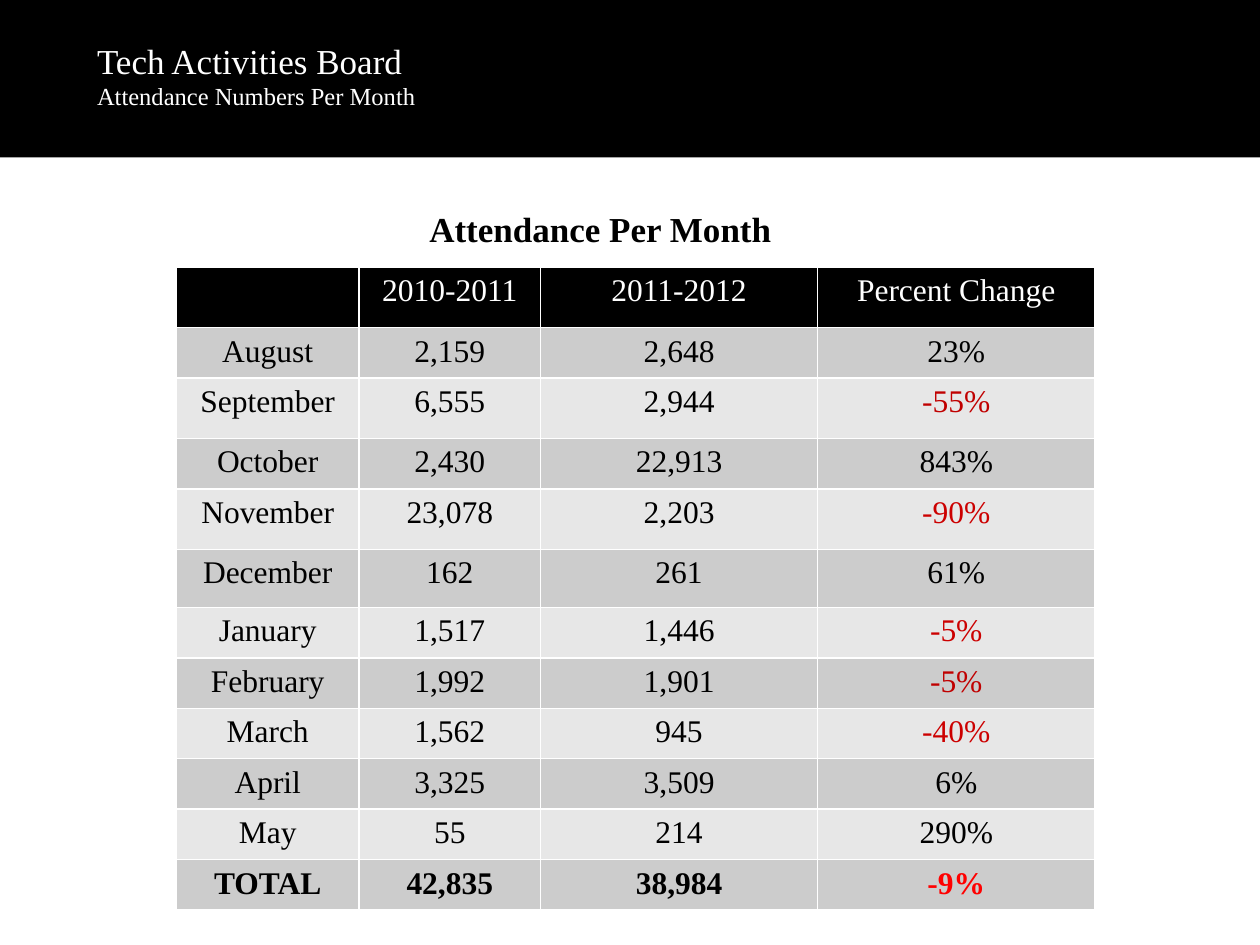
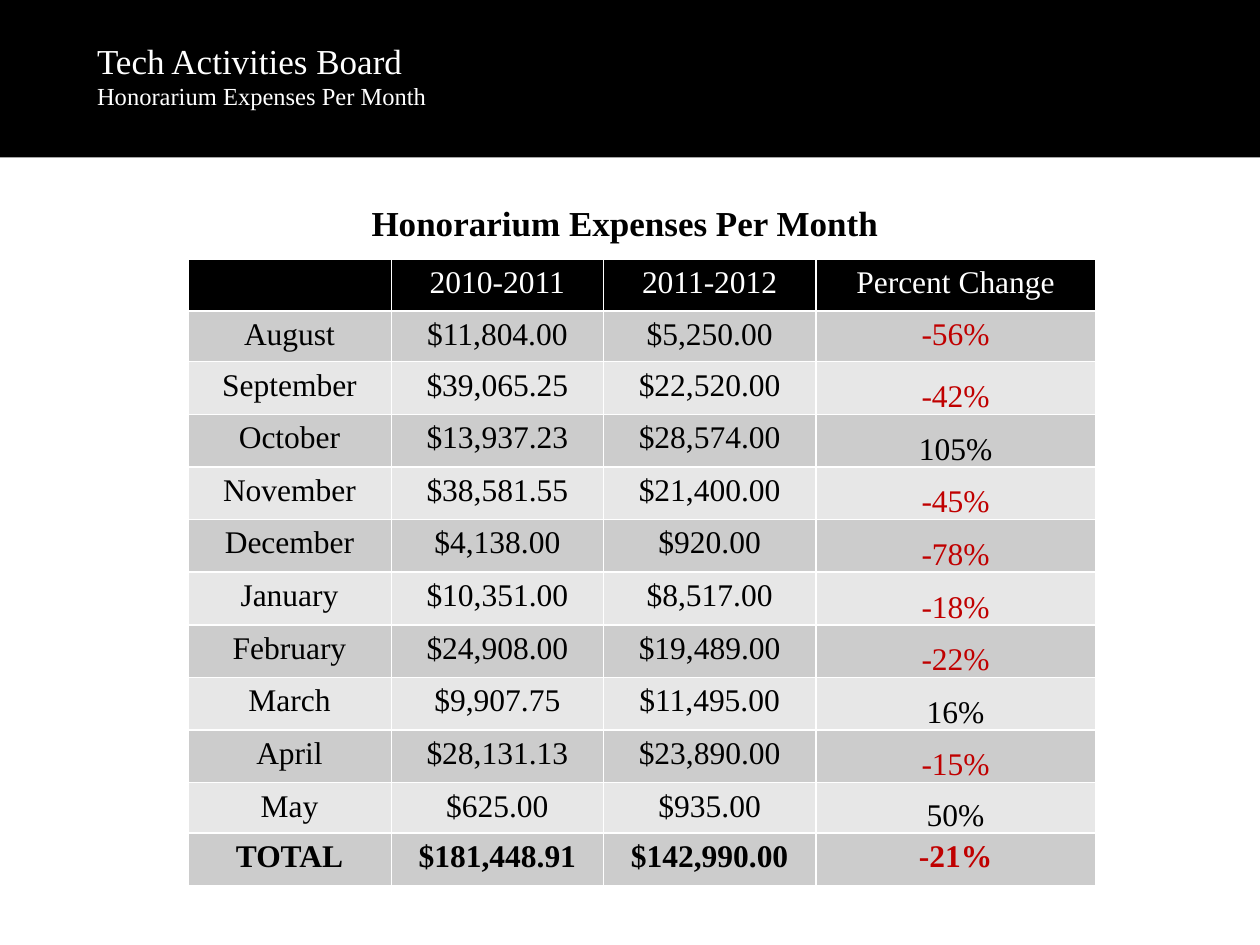
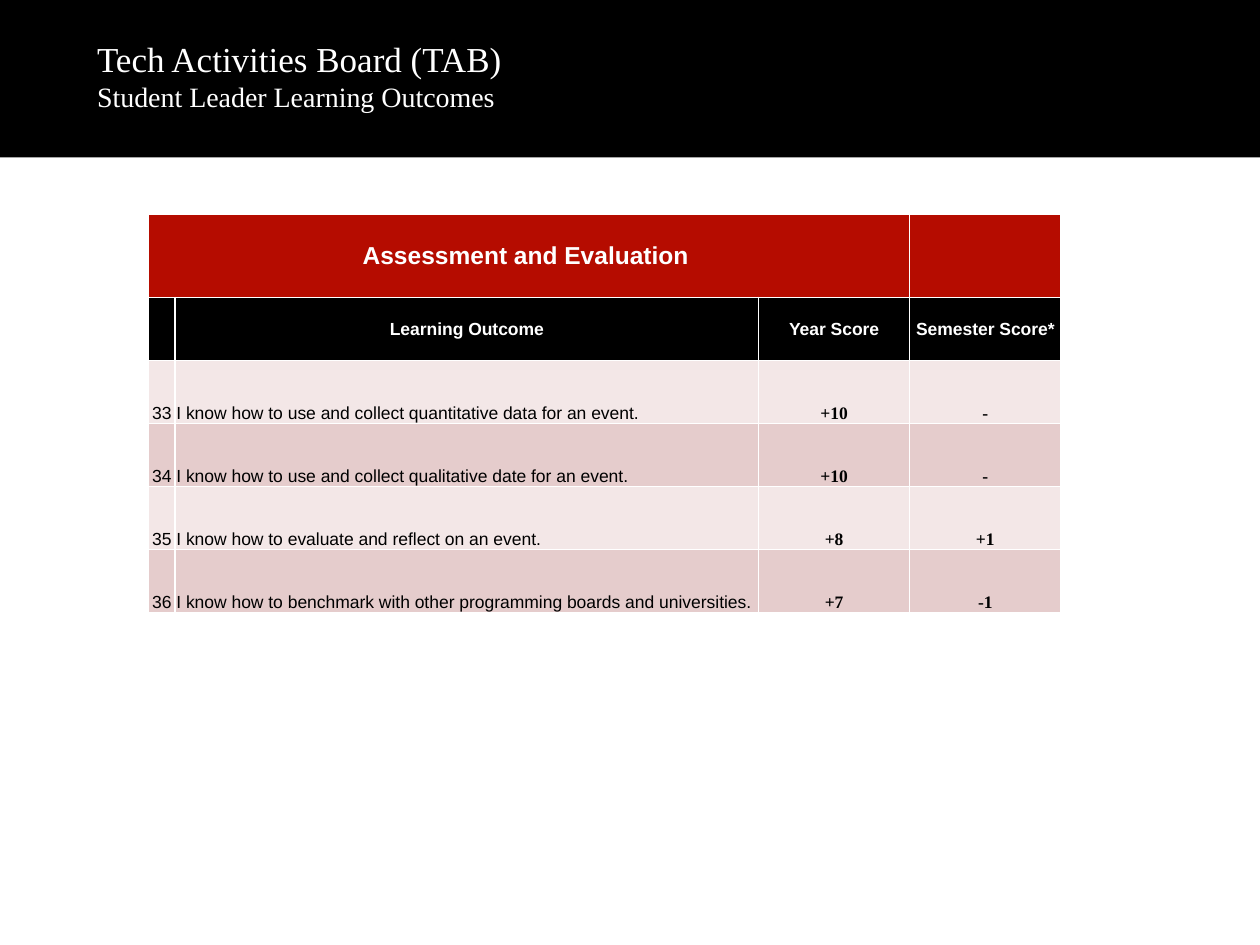
from lxml import etree
from pptx import Presentation
from pptx.dml.color import RGBColor
from pptx.enum.shapes import MSO_SHAPE
from pptx.enum.text import MSO_ANCHOR, MSO_AUTO_SIZE, PP_ALIGN
from pptx.oxml.ns import qn
from pptx.util import Inches, Pt

RECT = MSO_SHAPE.RECTANGLE
TOP, MIDDLE, BOTTOM = MSO_ANCHOR.TOP, MSO_ANCHOR.MIDDLE, MSO_ANCHOR.BOTTOM
LEFT, CENTER = PP_ALIGN.LEFT, PP_ALIGN.CENTER
NO_FIT = MSO_AUTO_SIZE.NONE

SLIDE_W, SLIDE_H = Inches(10), Inches(7.5)
UNIT = SLIDE_W / 100
SERIF, SANS = "Times New Roman", "Arial"
ROOMY = (1, 0.5, 1, 0.5)
TIGHT = (0.1, 0.1, 0.1, 0)

COLORS = {
    "black": "000000",
    "white": "FFFFFF",
    "dark_band": "CCCCCC",
    "light_band": "E7E7E7",
    "loss": "C00000",
    "bright_loss": "CC0000",
    "total_loss": "FF0000",
    "heading": "B50C00",
    "pale_rose": "F3E7E7",
    "rose": "E5CCCC",
}

YEARS = ("", "2010-2011", "2011-2012", "Percent Change")
ATTENDANCE = [
    YEARS,
    ("August", "2,159", "2,648", "23%"),
    ("September", "6,555", "2,944", "-55%"),
    ("October", "2,430", "22,913", "843%"),
    ("November", "23,078", "2,203", "-90%"),
    ("December", "162", "261", "61%"),
    ("January", "1,517", "1,446", "-5%"),
    ("February", "1,992", "1,901", "-5%"),
    ("March", "1,562", "945", "-40%"),
    ("April", "3,325", "3,509", "6%"),
    ("May", "55", "214", "290%"),
    ("TOTAL", "42,835", "38,984", "-9%"),
]
ATTENDANCE_LOSSES = {
    "November": "bright_loss",
    "January": "bright_loss",
    "March": "bright_loss",
    "TOTAL": "total_loss",
}
EXPENSES = [
    YEARS,
    ("August", "$11,804.00", "$5,250.00", "-56%"),
    ("September", "$39,065.25", "$22,520.00", "-42%"),
    ("October", "$13,937.23", "$28,574.00", "105%"),
    ("November", "$38,581.55", "$21,400.00", "-45%"),
    ("December", "$4,138.00", "$920.00", "-78%"),
    ("January", "$10,351.00", "$8,517.00", "-18%"),
    ("February", "$24,908.00", "$19,489.00", "-22%"),
    ("March", "$9,907.75", "$11,495.00", "16%"),
    ("April", "$28,131.13", "$23,890.00", "-15%"),
    ("May", "$625.00", "$935.00", "50%"),
    ("TOTAL", "$181,448.91", "$142,990.00", "-21%"),
]
OUTCOMES = [
    ("Assessment and Evaluation ", "", "", ""),
    ("", "Learning Outcome", "Year Score", "Semester Score*"),
    ("33", "I know how to use and collect quantitative data for an event.", "+10", "-"),
    ("34", "I know how to use and collect qualitative date for an event.", "+10", "-"),
    ("35", "I know how to evaluate and reflect on an event.", "+8", "+1"),
    ("36", "I know how to benchmark with other programming boards and universities.",
     "+7", "-1"),
]


def grid(n):
    return int(n * UNIT)


def rgb(name):
    return RGBColor.from_string(COLORS[name])


def format_run(r, size, color="black", font=SERIF, bold=False):
    r.font.size = Pt(size)
    r.font.name = font
    r.font.bold = bold
    r.font.color.rgb = rgb(color)


def add_band(s, layout):
    band = s.shapes.add_shape(RECT, 0, 0, SLIDE_W, grid(12.5))
    band.shadow.inherit = False
    band.fill.solid()
    band.fill.fore_color.rgb = rgb("black")
    band.line.fill.background()
    layout.placeholders[0].element.addprevious(band.element)


def set_title(s, name, topic, topic_size):
    title = s.shapes.title
    title.left, title.top = grid(6.7), grid(-0.3)
    title.width, title.height = grid(82.2), grid(12.5)
    tf = title.text_frame
    tf.word_wrap = True
    tf.auto_size = NO_FIT
    tf.vertical_anchor = MIDDLE
    p = tf.paragraphs[0]
    p.alignment = LEFT
    for text, size in ((name, 20), (topic, topic_size)):
        if p.runs:
            p.add_line_break()
        r = p.add_run()
        r.text = text
        format_run(r, size, "white")
    for br in p._p.findall(qn("a:br")):
        etree.SubElement(br, qn("a:rPr"), sz="2000")


def add_caption(s, text, left, top, width, align=CENTER, wrap=True):
    box = s.shapes.add_textbox(grid(left), grid(top), grid(width), grid(4.4))
    tf = box.text_frame
    tf.text = text
    tf.word_wrap = wrap
    p = tf.paragraphs[0]
    p.alignment = align
    format_run(p.runs[0], 20, bold=True)


def set_borders(cell):
    tcPr = cell._tc.get_or_add_tcPr()
    for side in ("a:lnL", "a:lnR", "a:lnT", "a:lnB"):
        ln = etree.SubElement(tcPr, qn(side), w=str(Pt(1)))
        fill = etree.SubElement(ln, qn("a:solidFill"))
        etree.SubElement(fill, qn("a:srgbClr"), val=COLORS["white"])


def write_cell(cell, text, fill, size, color="black", font=SERIF, bold=False,
               align=CENTER, anchor=TOP, margins=ROOMY):
    set_borders(cell)
    cell.fill.solid()
    cell.fill.fore_color.rgb = rgb(fill)
    cell.vertical_anchor = anchor
    (cell.margin_left, cell.margin_top,
     cell.margin_right, cell.margin_bottom) = map(grid, margins)
    p = cell.text_frame.paragraphs[0]
    p.text = text
    p.alignment = align
    for r in p.runs:
        format_run(r, size, color, font, bold)


def add_grid_table(s, left, top, cols, rows):
    frame = s.shapes.add_table(len(rows), len(cols), grid(left), grid(top),
                               grid(sum(cols)), grid(sum(rows)))
    table = frame.table
    for column, width in zip(table.columns, cols):
        column.width = grid(width)
    for row, height in zip(table.rows, rows):
        row.height = grid(height)
    return table


def fill_months(table, data, losses, low_changes=False):
    last = len(data) - 1
    for i, record in enumerate(data):
        fill = "black" if i == 0 else "dark_band" if i % 2 else "light_band"
        for j, text in enumerate(record):
            color = "white" if i == 0 else "black"
            if text.startswith("-"):
                color = losses.get(record[0], "loss")
            low = low_changes and j == 3 and 1 < i < last
            write_cell(table.cell(i, j), text, fill, 18, color, bold=i == last,
                       anchor=BOTTOM if low else TOP,
                       margins=TIGHT if low else ROOMY)


def fill_outcomes(table, data):
    table.cell(0, 0).merge(table.cell(0, 2))
    for i, record in enumerate(data):
        for j, text in enumerate(record):
            cell = table.cell(i, j)
            if i < 2:
                write_cell(cell, text, ("heading", "black")[i], (14, 10)[i], "white",
                           SANS, True, anchor=MIDDLE, margins=TIGHT)
            else:
                score = j > 1
                write_cell(cell, text, ("pale_rose", "rose")[i % 2], 10,
                           font=SERIF if score else SANS, bold=score,
                           align=LEFT if j == 1 else CENTER,
                           anchor=BOTTOM, margins=TIGHT)


def main():
    prs = Presentation()
    prs.slide_width, prs.slide_height = SLIDE_W, SLIDE_H
    layout = prs.slide_layouts[5]

    s = prs.slides.add_slide(layout)
    add_band(s, layout)
    set_title(s, "Tech Activities Board", "Attendance Numbers Per Month", 14)
    add_caption(s, "Attendance Per Month ", 20.3, 16, 55.4)
    rows = [4.8, 4, 4.8, 4, 4.8, 4.6] + [4] * 6
    table = add_grid_table(s, 14, 21.2, [14.5, 14.4, 22, 22], rows)
    fill_months(table, ATTENDANCE, ATTENDANCE_LOSSES)

    s = prs.slides.add_slide(layout)
    set_title(s, "Tech Activities Board", "Honorarium Expenses Per Month", 14)
    add_caption(s, "Honorarium Expenses Per Month", 28.5, 15.5, 43.2, LEFT, False)
    rows = [4.1, 4] + [4.18] * 8 + [4, 4.18]
    table = add_grid_table(s, 14.9, 20.6, [16.15, 16.85, 16.85, 22.2], rows)
    fill_months(table, EXPENSES, {}, low_changes=True)

    s = prs.slides.add_slide(layout)
    set_title(s, "Tech Activities Board (TAB)", "Student Leader Learning Outcomes", 16)
    table = add_grid_table(s, 11.8, 17, [2.1, 46.3, 12, 12], [6.6] + [5] * 5)
    fill_outcomes(table, OUTCOMES)

    prs.save("out.pptx")


if __name__ == "__main__":
    main()
